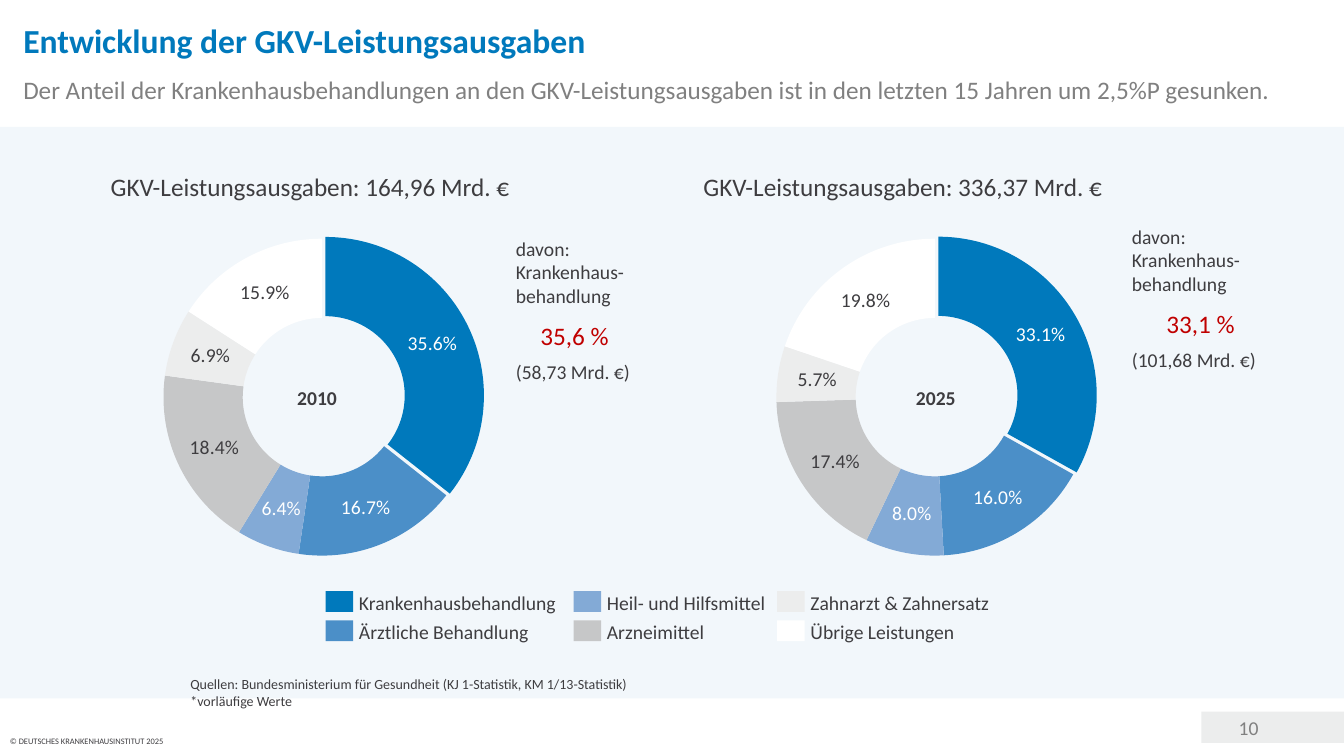
"""Build a slide that compares health insurance spending in 2010 and 2025."""
from lxml.etree import SubElement
from pptx import Presentation
from pptx.chart.data import CategoryChartData
from pptx.dml.color import RGBColor
from pptx.enum.chart import XL_CHART_TYPE
from pptx.enum.shapes import MSO_SHAPE
from pptx.enum.text import MSO_ANCHOR, MSO_AUTO_SIZE, PP_ALIGN
from pptx.oxml import parse_xml
from pptx.oxml.ns import nsdecls, qn
from pptx.util import Pt

BLUE, MID_BLUE, DARK, GREY, RED = "0079BC", "4B8FC8", "3E3D40", "808080", "C00000"
PALE, WHITE = "ECEDED", "FFFFFF"

SPENDING = [
    ("Krankenhausbehandlung", BLUE, WHITE),
    ("Ärztliche Behandlung", MID_BLUE, WHITE),
    ("Heil- und Hilfsmittel", "83AAD6", WHITE),
    ("Arzneimittel", "C6C7C8", DARK),
    ("Zahnarzt & Zahnersatz", PALE, DARK),
    ("Übrige Leistungen", WHITE, DARK),
]
YEARS = [
    dict(year="2010", total="164,96", share="35,6 %", amount="58,73",
         shares=(35.6, 16.7, 6.4, 18.4, 6.9, 15.9),
         ring_left=88.5, year_left=185.8, total_left=72, share_box=(361.4, 165.6, 98, 116.6)),
    dict(year="2025", total="336,37", share="33,1 %", amount="101,68",
         shares=(33.1, 16.0, 8.0, 17.4, 5.7, 19.8),
         ring_left=526.3, year_left=627.8, total_left=495.4, share_box=(801.4, 157, 112.3, 116.6)),
]


def color(hex_code):
    return RGBColor.from_string(hex_code)


class SlideBuilder:
    font_name = "Calibri"

    def __init__(self, presentation):
        self.slide = presentation.slides.add_slide(presentation.slide_layouts[1])

    def place(self, item, left, top, width, height):
        item.left, item.top, item.width, item.height = map(Pt, (left, top, width, height))

    def style(self, font, size, hex_code, bold=False):
        font.name, font.size, font.bold = self.font_name, Pt(size), bold
        font.color.rgb = color(hex_code)

    def paragraph(self, paragraph, text, size, hex_code=DARK, bold=False,
                  align=PP_ALIGN.LEFT, before=0):
        paragraph.text = text
        paragraph.alignment = align
        paragraph.space_before = Pt(before)
        self.style(paragraph.font, size, hex_code, bold)

    def placeholder(self, index, box, text, size, hex_code, bold=False):
        holder = self.slide.placeholders[index]
        self.place(holder, *box)
        frame = holder.text_frame
        frame.auto_size = MSO_AUTO_SIZE.NONE
        frame.vertical_anchor = MSO_ANCHOR.TOP
        line = frame.paragraphs[0]
        properties = line._p.get_or_add_pPr()
        properties.set("marL", "0")
        properties.set("indent", "0")
        SubElement(properties, qn("a:buNone"))
        self.paragraph(line, text, size, hex_code, bold)

    def text(self, box, lines, wrap=True, inset=True, anchor=MSO_ANCHOR.TOP):
        frame = self.slide.shapes.add_textbox(*map(Pt, box)).text_frame
        frame.word_wrap = wrap
        frame.vertical_anchor = anchor
        if not inset:
            frame.margin_left = frame.margin_right = frame.margin_top = frame.margin_bottom = 0
        for number, line in enumerate(lines):
            target = frame.add_paragraph() if number else frame.paragraphs[0]
            self.paragraph(target, **line)

    def rectangle(self, box, fill, opacity=None):
        shape = self.slide.shapes.add_shape(MSO_SHAPE.RECTANGLE, *map(Pt, box))
        shape.shadow.inherit = False
        shape.fill.solid()
        shape.fill.fore_color.rgb = color(fill)
        shape.line.fill.background()
        if opacity is not None:
            tint = shape.fill._xPr.find(qn("a:solidFill"))[0]
            SubElement(tint, qn("a:alpha")).set("val", str(opacity * 1000))

    def ring(self, box, shares):
        data = CategoryChartData(number_format='0.0"%"')
        data.categories = [name for name, _, _ in SPENDING]
        data.add_series("Anteil", shares)
        chart = self.slide.shapes.add_chart(XL_CHART_TYPE.DOUGHNUT, *map(Pt, box), data).chart
        chart.has_legend = chart.has_title = False
        self.style(chart.font, 14, DARK)
        plot = chart.plots[0]
        plot.vary_by_categories = True
        for point_number, (_, fill, label) in enumerate(SPENDING):
            point = plot.series[0].points[point_number]
            point.format.fill.solid()
            point.format.fill.fore_color.rgb = color(fill)
            point.format.line.fill.background()
            self.style(point.data_label.font, 14, label)
        first_slice = chart.element.find(".//" + qn("c:dPt"))
        first_slice.find(qn("c:spPr")).addprevious(
            parse_xml(f'<c:explosion {nsdecls("c")} val="5"/>'))
        area = chart.element.find(".//" + qn("c:plotArea"))
        for layout in area.findall(qn("c:layout")):
            area.remove(layout)
        settings = dict(layoutTarget="inner", xMode="edge", yMode="edge",
                        x=0.1, y=0.11, w=0.8, h=0.79)
        layout = SubElement(area, qn("c:layout"))
        area.insert(0, layout)
        manual = SubElement(layout, qn("c:manualLayout"))
        for key, value in settings.items():
            SubElement(manual, qn(f"c:{key}")).set("val", str(value))


def main():
    presentation = Presentation()
    presentation.slide_width, presentation.slide_height = Pt(960), Pt(540)
    page = SlideBuilder(presentation)

    page.rectangle((858.2, 508.3, 101.8, 22.3), PALE)
    page.text((877.7, 507.6, 40.3, 24.5), [dict(text="10", size=14, hex_code=GREY)], wrap=False)
    page.text((0, 522, 226.8, 17.3), [dict(text="© DEUTSCHES KRANKENHAUSINSTITUT 2025", size=6)])
    page.rectangle((0, 90.7, 960, 408.2), MID_BLUE, opacity=7)

    page.placeholder(0, (9.4, 10.8, 828, 36.7), "Entwicklung der GKV-Leistungsausgaben",
                     24, BLUE, True)
    page.placeholder(1, (9.4, 49.7, 929.5, 33.8),
                     "Der Anteil der Krankenhausbehandlungen an den GKV-Leistungsausgaben "
                     "ist in den letzten 15 Jahren um 2,5%P gesunken.", 18, GREY)

    for entry in YEARS:
        page.text((entry["total_left"], 118.8, 329.8, 33.8),
                  [dict(text=f"GKV-Leistungsausgaben: {entry['total']} Mrd. €", size=18)])
        page.ring((entry["ring_left"], 139, 283, 286.6), entry["shares"])
        page.text((entry["year_left"], 272.2, 81.4, 24.5),
                  [dict(text=entry["year"], size=14, bold=True, align=PP_ALIGN.CENTER)])
        page.text(entry["share_box"], [
            dict(text="davon: Krankenhaus-behandlung", size=14),
            dict(text=entry["share"], size=18, hex_code=RED, align=PP_ALIGN.CENTER, before=9),
            dict(text=f"({entry['amount']} Mrd. €)", size=14, before=7),
        ])

    legend_columns = (232.6, 409.7, 555.1)
    for number, (name, fill, _) in enumerate(SPENDING):
        column, row = divmod(number, 2)
        left, top = legend_columns[column], 422.3 + 20.9 * row
        page.rectangle((left, top, 19.7, 14.7), fill)
        page.text((left + 23.8, top - 0.4, 145, 16.6), [dict(text=name, size=14)],
                  wrap=False, inset=False, anchor=MSO_ANCHOR.MIDDLE)

    page.text((128.9, 478.8, 661.7, 16.6), [
        dict(text="Quellen: Bundesministerium für Gesundheit (KJ 1-Statistik, KM 1/13-Statistik)",
             size=10),
        dict(text="*vorläufige Werte", size=10),
    ])
    presentation.save("out.pptx")


if __name__ == "__main__":
    main()
